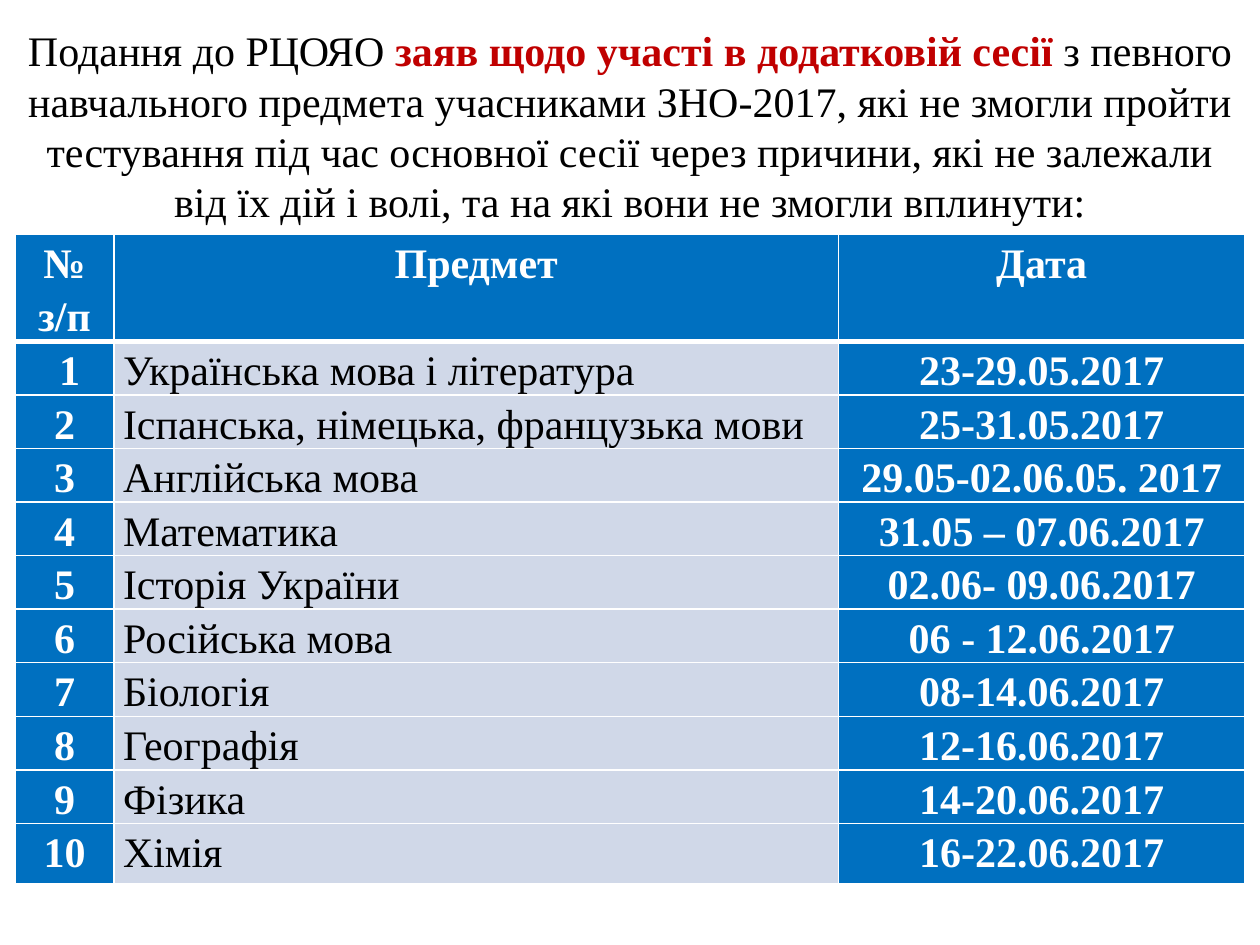
from pptx import Presentation
from pptx.dml.color import RGBColor
from pptx.enum.text import MSO_ANCHOR, PP_ALIGN
from pptx.oxml.ns import qn
from pptx.util import Cm, Pt
from lxml.etree import SubElement

BLUE = RGBColor(0x00, 0x70, 0xC0)
PALE = RGBColor(0xD0, 0xD8, 0xE8)
RED = RGBColor(0xC0, 0x00, 0x00)
BLACK = RGBColor(0x00, 0x00, 0x00)
WHITE = RGBColor(0xFF, 0xFF, 0xFF)

FONT = "Times New Roman"
LEFT, WIDTH = Cm(0.3), Cm(24.8)
COL_WIDTHS = (2, 14.6, 8.2)
HEADER_H, ROW_H, LAST_H = 2.15, 1.08, 1.21
CELL_LINE = Pt(30.4)  # fixed, so that the rows keep their heights

TITLE = [
    ("Подання до РЦОЯО ", BLACK, False),
    ("заяв щодо участі в додатковій сесії ", RED, True),
    ("з певного навчального предмета учасниками ЗНО-2017, які не змогли "
     "пройти тестування під час основної сесії через причини, які не залежали "
     "від їх дій і волі, та на які вони не змогли вплинути:", BLACK, False),
]
ROWS = [
    ("№ з/п", "Предмет", "Дата"),
    (" 1", "Українська мова і література", "23-29.05.2017"),
    ("2", "Іспанська, німецька, французька мови", "25-31.05.2017"),
    ("3", "Англійська мова", "29.05-02.06.05. 2017"),
    ("4", "Математика", "31.05 – 07.06.2017"),
    ("5", "Історія України", "02.06- 09.06.2017"),
    ("6", "Російська мова", "06 - 12.06.2017"),
    ("7", "Біологія", "08-14.06.2017"),
    ("8", "Географія", "12-16.06.2017"),
    ("9", "Фізика", "14-20.06.2017"),
    ("10", "Хімія", "16-22.06.2017"),
]


def add_run(p, text, color, bold):
    r = p.add_run()
    r.text = text
    r.font.name, r.font.size = FONT, Pt(24)
    r.font.color.rgb, r.font.bold = color, bold


def add_title(s):
    tf = s.shapes.add_textbox(LEFT, Cm(0.33), WIDTH, Cm(4.4)).text_frame
    tf.word_wrap = True
    tf.vertical_anchor = MSO_ANCHOR.MIDDLE
    tf.margin_left = tf.margin_right = Cm(0.2)
    p = tf.paragraphs[0]
    p.alignment = PP_ALIGN.CENTER
    for text, color, bold in TITLE:
        add_run(p, text, color, bold)


def set_borders(cell, bottom):
    """Draw white cell borders; they must precede the fill in tcPr."""
    tcPr = cell._tc.get_or_add_tcPr()
    for i, (side, width) in enumerate(
            (("lnL", 1), ("lnR", 1), ("lnT", 1), ("lnB", bottom))):
        ln = SubElement(tcPr, qn(f"a:{side}"), w=str(Pt(width)))
        fill = SubElement(ln, qn("a:solidFill"))
        SubElement(fill, qn("a:srgbClr"), val=str(WHITE))
        tcPr.insert(i, ln)


def fill_cell(cell, text, is_header, is_subject):
    set_borders(cell, 3 if is_header else 1)
    cell.fill.solid()
    cell.fill.fore_color.rgb = PALE if is_subject else BLUE
    cell.margin_left = cell.margin_right = Cm(0.18)
    cell.margin_top = cell.margin_bottom = 0
    p = cell.text_frame.paragraphs[0]
    p.line_spacing = CELL_LINE
    p.alignment = PP_ALIGN.LEFT if is_subject else PP_ALIGN.CENTER
    add_run(p, text, BLACK if is_subject else WHITE, not is_subject)


def add_schedule(s):
    heights = [HEADER_H] + [ROW_H] * (len(ROWS) - 2) + [LAST_H]
    table = s.shapes.add_table(len(ROWS), len(COL_WIDTHS), LEFT, Cm(4.73),
                               WIDTH, Cm(sum(heights))).table
    for col, width in zip(table.columns, COL_WIDTHS):
        col.width = Cm(width)
    for i, (row, height) in enumerate(zip(table.rows, heights)):
        row.height = Cm(height)
        for j, text in enumerate(ROWS[i]):
            fill_cell(table.cell(i, j), text, i == 0, i > 0 and j == 1)


def main():
    prs = Presentation()
    prs.slide_width, prs.slide_height = Cm(25.4), Cm(19.05)
    s = prs.slides.add_slide(prs.slide_layouts[6])
    # Heading
    add_title(s)
    # Dates by subject
    add_schedule(s)
    prs.save("out.pptx")


if __name__ == "__main__":
    main()
